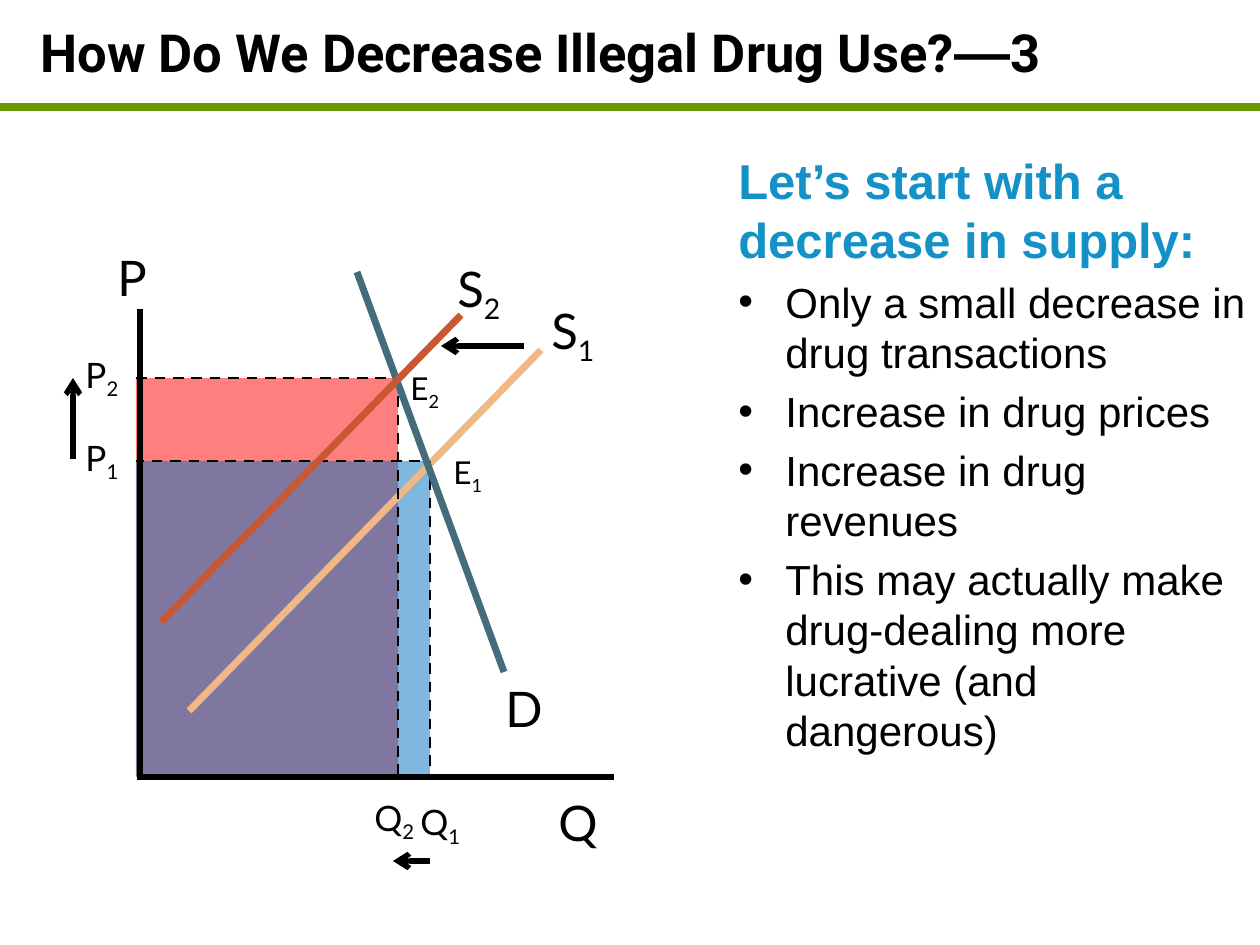
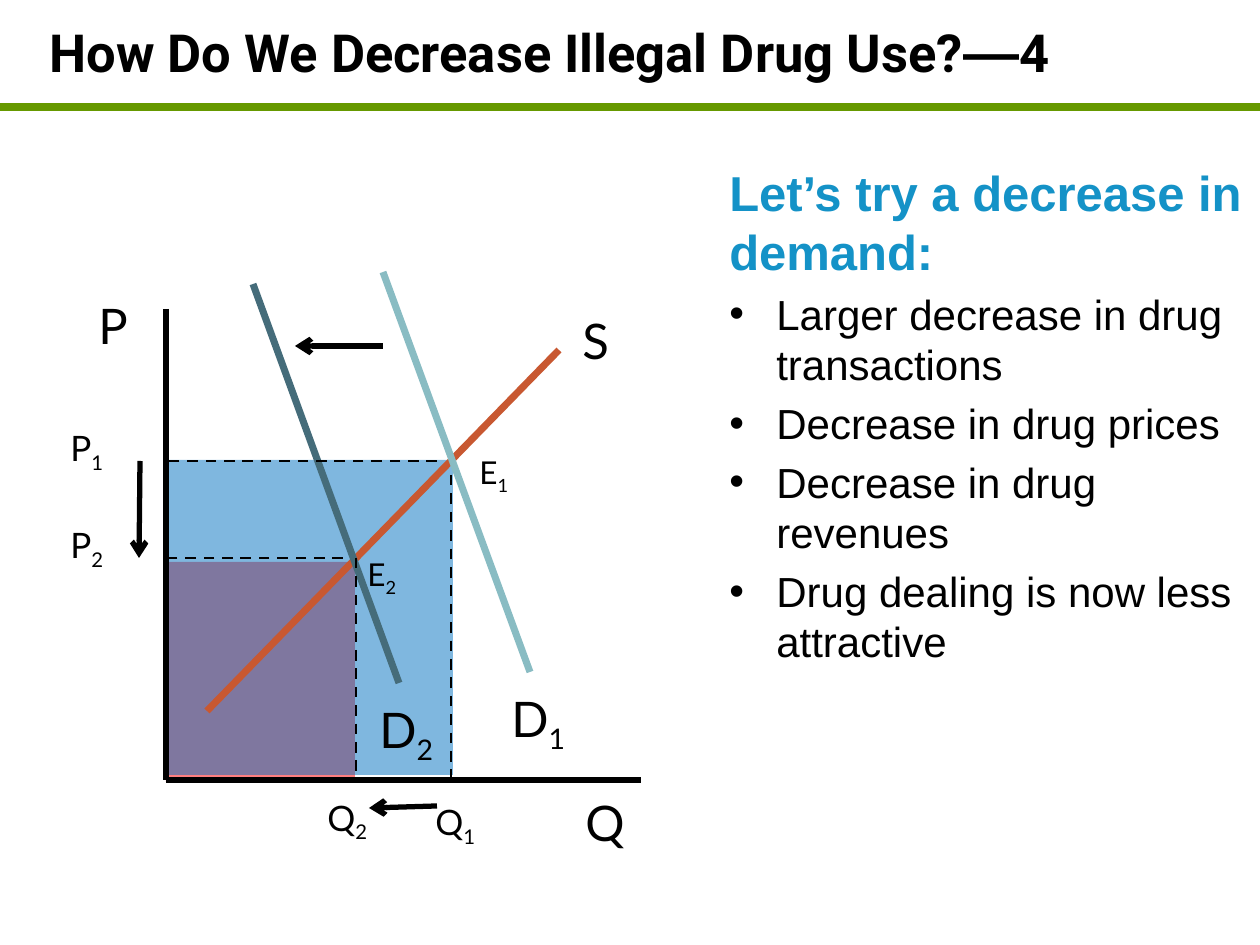
import dataclasses

import lxml.etree
import pptx
import pptx.dml.color
import pptx.enum.dml
import pptx.enum.shapes
import pptx.enum.text
import pptx.oxml.ns
import pptx.util

PX = 914400 / 126  # EMU in one px


@dataclasses.dataclass(frozen=True)
class Theme:
    ink: str = "000000"
    band: str = "669900"
    heading: str = "1492C7"
    red_area: str = "FF0000"
    blue_area: str = "0070C0"
    teal: str = "456C7A"
    pale_teal: str = "89BCC3"
    rust: str = "C85831"
    peach: str = "F0B884"
    title_font: str = "Roboto"
    body_font: str = "Arial"
    label_font: str = "Lato"
    title_size: int = 30
    dash_size: int = 32
    heading_size: int = 28
    bullet_size: int = 24
    curve_size: int = 28
    tick_size: int = 20
    point_size: int = 18
    band_width: float = 4.5
    curve_width: float = 4
    axis_width: float = 3
    guide_width: float = 1.5


def emu(*lengths):
    return [pptx.util.Emu(round(v * PX)) for v in lengths]


def rgb(color):
    return pptx.dml.color.RGBColor.from_string(color)


def child(parent, tag, **attrs):
    el = lxml.etree.SubElement(parent, pptx.oxml.ns.qn(tag))
    for name, value in attrs.items():
        el.set(name, value)
    return el


def add_run(p, text, size, font, color, bold=False, sub=False):
    r = p.add_run()
    r.text = text
    r.font.size = pptx.util.Pt(size)
    r.font.name = font
    r.font.bold = bold
    r.font.color.rgb = rgb(color)
    if sub:
        r._r.get_or_add_rPr().set("baseline", "-25000")


class Deck:
    def __init__(self, theme):
        self.t = theme
        self.prs = pptx.Presentation()
        self.prs.slide_width, self.prs.slide_height = emu(1260, 945)
        self.s = None

    def slide(self, number, left):
        """Start a slide with its green band and title."""
        t = self.t
        self.s = self.prs.slides.add_slide(self.prs.slide_layouts[6])
        self.line((0, 107, 1260, 107), t.band, t.band_width)
        tf = self.box(left, -3, 1220, 106)
        tf.vertical_anchor = pptx.enum.text.MSO_ANCHOR.MIDDLE
        p = tf.paragraphs[0]
        for text, size, font in (
            ("How Do We Decrease Illegal Drug Use?", t.title_size, t.title_font),
            ("—", t.dash_size, t.body_font),
            (number, t.title_size, t.title_font),
        ):
            add_run(p, text, size, font, t.ink, bold=True)

    def box(self, x, y, w, h):
        tf = self.s.shapes.add_textbox(*emu(x, y, w, h)).text_frame
        tf.word_wrap = True
        return tf

    def body(self, x, y, w, h, heading, bullets):
        t = self.t
        tf = self.box(x, y, w, h)
        p = tf.paragraphs[0]
        p.space_before = pptx.util.Pt(0.2 * t.heading_size)
        add_run(p, heading, t.heading_size, t.body_font, t.heading, bold=True)
        for text in bullets:
            p = tf.add_paragraph()
            p.space_before = pptx.util.Pt(0.2 * t.bullet_size)
            pPr = p._p.get_or_add_pPr()
            indent = emu(47)[0]
            pPr.set("marL", str(indent))
            pPr.set("indent", str(-indent))
            child(pPr, "a:buFont", typeface=t.body_font)
            child(pPr, "a:buChar", char="•")
            add_run(p, text, t.bullet_size, t.body_font, t.ink)

    def label(self, x, y, text, size):
        """A letter, followed by its subscript if it has one."""
        p = self.box(x, y, 108, 72).paragraphs[0]
        add_run(p, text[0], size, self.t.label_font, self.t.ink)
        if text[1:]:
            add_run(p, text[1:], size, self.t.label_font, self.t.ink, sub=True)

    def area(self, x, y, w, h, color):
        """A half-transparent revenue rectangle."""
        sp = self.s.shapes.add_shape(
            pptx.enum.shapes.MSO_SHAPE.RECTANGLE, *emu(x, y, w, h))
        sp.shadow.inherit = False
        sp.fill.solid()
        sp.fill.fore_color.rgb = rgb(color)
        sp.line.fill.background()
        fill = sp._element.spPr.find(pptx.oxml.ns.qn("a:solidFill"))
        child(fill[0], "a:alpha", val="50000")

    def line(self, ends, color, width, dashed=False, arrow=False):
        sp = self.s.shapes.add_connector(
            pptx.enum.shapes.MSO_CONNECTOR.STRAIGHT, *emu(*ends))
        sp.line.color.rgb = rgb(color)
        sp.line.width = pptx.util.Pt(width)
        if dashed:
            sp.line.dash_style = pptx.enum.dml.MSO_LINE.DASH
        if arrow:
            child(sp.line._get_or_add_ln(), "a:tailEnd", type="arrow")
        child(sp._element.spPr, "a:effectLst")

    def graph(self, areas, axes, back_curves, guides, labels, arrows, front_curves):
        """A supply and demand graph, drawn from back to front."""
        t = self.t
        for *frame, color in areas:
            self.area(*frame, color)
        for ends in axes:
            self.line(ends, t.ink, t.axis_width)
        for *ends, color in back_curves:
            self.line(ends, color, t.curve_width)
        for ends in guides:
            self.line(ends, t.ink, t.guide_width, dashed=True)
        for size, group in labels.items():
            for x, y, text in group:
                self.label(x, y, text, size)
        for ends in arrows:
            self.line(ends, t.ink, t.axis_width, arrow=True)
        for *ends, color in front_curves:
            self.line(ends, color, t.curve_width)


def supply_slide(deck):
    t = deck.t
    deck.slide("3", 28)
    deck.body(726, 144, 534, 766, "Let’s start with a decrease in supply:", [
        "Only a small decrease in drug transactions",
        "Increase in drug prices",
        "Increase in drug revenues",
        "This may actually make drug-dealing more lucrative (and dangerous)",
    ])
    deck.graph(
        areas=[(136, 378, 262, 399, t.red_area), (136, 461, 294, 315, t.blue_area)],
        axes=[(140, 309, 140, 780), (140, 777, 614, 777)],
        back_curves=[(189, 711, 541, 350, t.peach)],
        guides=[(398, 378, 398, 777), (420, 461, 136, 461),
                (430, 461, 430, 776), (386, 378, 136, 378)],
        labels={
            t.curve_size: [(105, 241, "P"), (546, 786, "Q"), (493, 672, "D"),
                           (445, 252, "S2"), (539, 294, "S1")],
            t.point_size: [(398, 363, "E2"), (441, 447, "E1")],
            t.tick_size: [(408, 794, "Q1"), (362, 790, "Q2"),
                          (73, 430, "P1"), (73, 347, "P2")],
        },
        arrows=[(524, 346, 441, 346), (73, 459, 73, 378), (430, 861, 393, 861)],
        front_curves=[(357, 272, 504, 672, t.teal), (161, 622, 461, 315, t.rust)],
    )


def demand_slide(deck):
    t = deck.t
    deck.slide("4", 37)
    deck.body(717, 156, 543, 732, "Let’s try a decrease in demand:", [
        "Larger decrease in drug transactions",
        "Decrease in drug prices",
        "Decrease in drug revenues",
        "Drug dealing is now less attractive",
    ])
    deck.graph(
        areas=[(166, 562, 189, 220, t.red_area), (169, 460, 284, 315, t.blue_area)],
        axes=[(166, 309, 166, 780), (166, 780, 641, 780)],
        back_curves=[(207, 711, 559, 350, t.rust), (253, 284, 399, 683, t.teal)],
        guides=[(356, 558, 356, 780), (343, 558, 166, 558),
                (451, 475, 451, 780), (437, 461, 166, 461)],
        labels={
            t.curve_size: [(86, 289, "P"), (573, 786, "Q"), (570, 304, "S"),
                           (367, 693, "D2"), (499, 682, "D1")],
            t.point_size: [(355, 549, "E2"), (467, 447, "E1")],
            t.tick_size: [(423, 794, "Q1"), (315, 790, "Q2"),
                          (58, 420, "P1"), (58, 517, "P2")],
        },
        arrows=[(383, 346, 295, 346), (140, 461, 139, 558), (437, 806, 369, 808)],
        front_curves=[(383, 272, 530, 672, t.pale_teal)],
    )


def main():
    deck = Deck(Theme())
    supply_slide(deck)
    demand_slide(deck)
    deck.prs.save("out.pptx")


if __name__ == "__main__":
    main()
